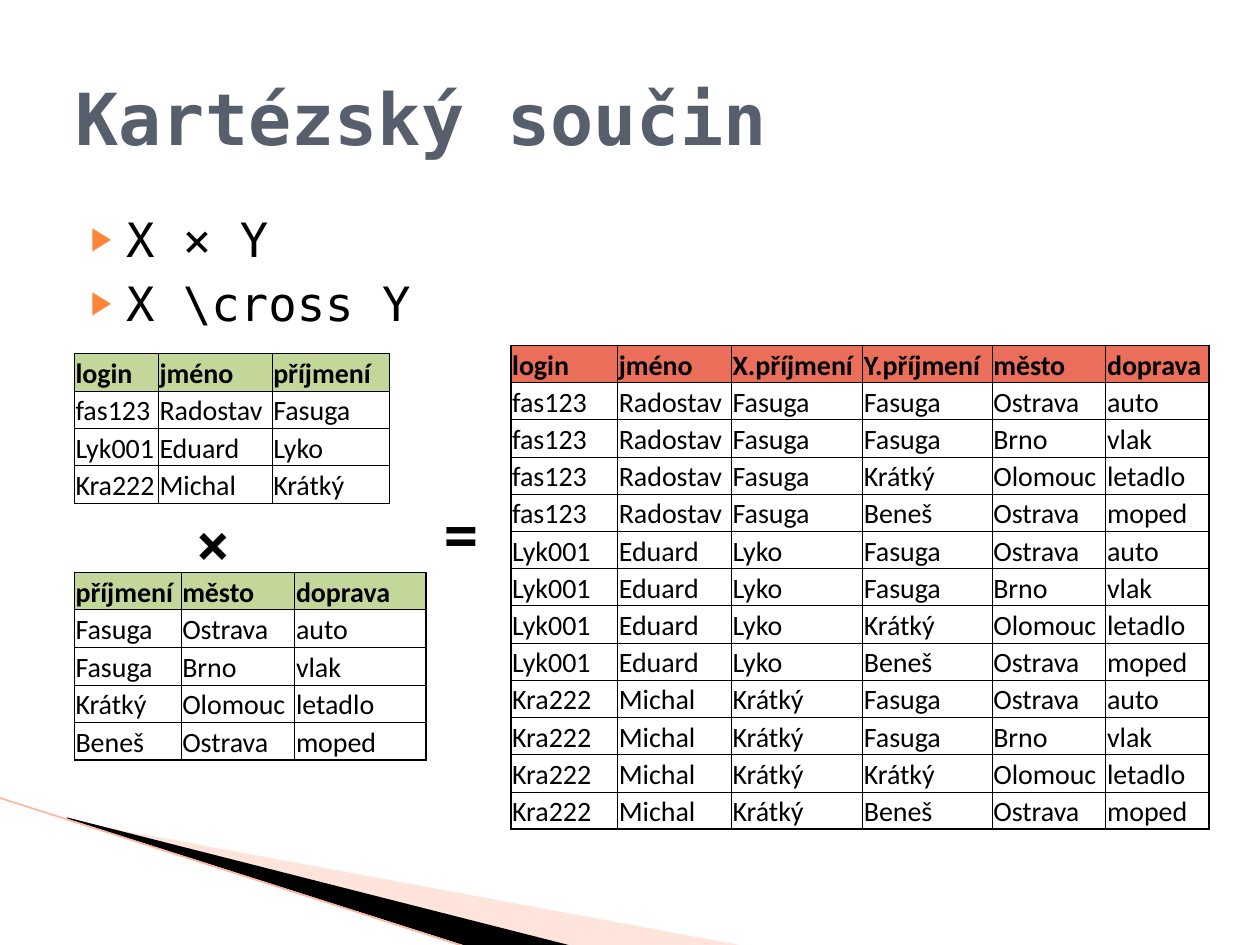
from itertools import product

from lxml.etree import SubElement
from pptx import Presentation
from pptx.dml.color import RGBColor
from pptx.enum.shapes import MSO_CONNECTOR
from pptx.enum.text import MSO_ANCHOR, MSO_AUTO_SIZE, PP_ALIGN
from pptx.oxml import parse_xml
from pptx.oxml.ns import nsdecls, qn
from pptx.util import Pt

COLORS = {
    "black": "000000",
    "title": "575F6D",
    "bullet": "FE8637",
    "operand": "C4D79B",
    "result": "EB6E5A",
    "pale": "FFBCA5",
    "edge": "FFB59B",
}
MONO, SANS = "DejaVu Sans Mono", "Calibri"

X_HEADER = ["login", "jméno", "příjmení"]
X_ROWS = [
    ["fas123", "Radostav", "Fasuga"],
    ["Lyk001", "Eduard", "Lyko"],
    ["Kra222", "Michal", "Krátký"],
]
Y_HEADER = ["příjmení", "město", "doprava"]
Y_ROWS = [
    ["Fasuga", "Ostrava", "auto"],
    ["Fasuga", "Brno", "vlak"],
    ["Krátký", "Olomouc", "letadlo"],
    ["Beneš", "Ostrava", "moped"],
]
RESULT_HEADER = ["login", "jméno", "X.příjmení", "Y.příjmení", "město", "doprava"]
RESULT_ROWS = [x_row + y_row for x_row, y_row in product(X_ROWS, Y_ROWS)]


def rgb(name):
    return RGBColor.from_string(COLORS[name])


def write(paragraph, text, size, font=MONO, color="black", bold=False):
    paragraph.alignment = PP_ALIGN.LEFT
    run = paragraph.add_run()
    run.text = text
    run.font.name = font
    run.font.size = Pt(size)
    run.font.bold = bold
    run.font.color.rgb = rgb(color)


def place(shape, box):
    shape.left, shape.top, shape.width, shape.height = map(Pt, box)


def add_wedge(slide, points, color, opacity=100):
    builder = slide.shapes.build_freeform(*points[0], scale=Pt(1))
    builder.add_line_segments(points[1:])
    shape = builder.convert_to_shape()
    shape.shadow.inherit = False
    shape.line.fill.background()
    shape.fill.solid()
    shape.fill.fore_color.rgb = rgb(color)
    if opacity < 100:
        color_element = shape.fill._xPr.find(qn("a:solidFill"))[0]
        SubElement(color_element, qn("a:alpha"), val=str(opacity * 1000))


def add_corner(slide):
    """Draw the wedges and the edge line in the lower left corner."""
    add_wedge(slide, [(39.6, 468.7), (428.4, 540.7), (328.3, 540.7), (39.6, 468)],
              "pale", opacity=40)
    add_wedge(slide, [(38.2, 467.3), (329, 540.7), (267.8, 541.4), (38.9, 468)], "black")
    edge = slide.shapes.add_connector(
        MSO_CONNECTOR.STRAIGHT, Pt(-0.7), Pt(455.8), Pt(267.1), Pt(541.4))
    edge.line.color.rgb = rgb("edge")
    edge.line.width = Pt(0.95)
    SubElement(edge._element.spPr, qn("a:effectLst"))


def fill_title(title, box, text):
    place(title, box)
    title.text_frame.auto_size = MSO_AUTO_SIZE.NONE
    title.text_frame.vertical_anchor = MSO_ANCHOR.MIDDLE
    write(title.text_frame.paragraphs[0], text, size=41, color="title", bold=True)


def add_bullet(paragraph):
    properties = paragraph._p.get_or_add_pPr()
    properties.set("marL", str(Pt(28.8)))
    properties.set("indent", str(Pt(-20.2)))
    color = SubElement(properties, qn("a:buClr"))
    SubElement(color, qn("a:srgbClr"), val=COLORS["bullet"])
    SubElement(properties, qn("a:buSzPct"), val="68000")
    SubElement(properties, qn("a:buChar"), char="▶")


def fill_list(body, box, items):
    place(body, box)
    frame = body.text_frame
    frame.auto_size = MSO_AUTO_SIZE.NONE
    for index, item in enumerate(items):
        paragraph = frame.add_paragraph() if index else frame.paragraphs[0]
        add_bullet(paragraph)
        paragraph.space_before = Pt(4 if index else 0)
        write(paragraph, item, size=27)


def set_borders(cell, widths):
    """Set the left, right, top and bottom borders, widths in points."""
    properties = cell._tc.get_or_add_tcPr()
    for index, (side, width) in enumerate(zip("LRTB", widths)):
        properties.insert(index, parse_xml(
            f'<a:ln{side} {nsdecls("a")} w="{Pt(width)}"><a:solidFill>'
            f'<a:srgbClr val="{COLORS["black"]}"/></a:solidFill></a:ln{side}>'))


def add_relation(slide, box, header, rows, column_widths, header_color):
    """Add a table with a coloured header, thin inner and thicker outer borders."""
    data = [header] + rows
    last_row, last_column = len(data) - 1, len(header) - 1
    table = slide.shapes.add_table(len(data), len(header), *map(Pt, box)).table
    table.first_row = table.horz_banding = False
    for column, width in zip(table.columns, column_widths):
        column.width = Pt(width)
    for row in table.rows:
        row.height = Pt(box[3] / len(data))
    for row_index, values in enumerate(data):
        for column_index, value in enumerate(values):
            cell = table.cell(row_index, column_index)
            cell.margin_left = cell.margin_right = cell.margin_top = Pt(0.7)
            cell.margin_bottom = 0
            cell.vertical_anchor = MSO_ANCHOR.BOTTOM
            is_header = row_index == 0
            if is_header:
                cell.fill.solid()
                cell.fill.fore_color.rgb = rgb(header_color)
            else:
                cell.fill.background()
            outer = (column_index == 0, column_index == last_column,
                     is_header, row_index == last_row)
            set_borders(cell, [1 if is_outer else 0.5 for is_outer in outer])
            write(cell.text_frame.paragraphs[0], value, size=16, font=SANS, bold=is_header)


def add_operator(slide, box, symbol):
    frame = slide.shapes.add_textbox(*map(Pt, box)).text_frame
    frame.word_wrap = True
    frame.auto_size = MSO_AUTO_SIZE.SHAPE_TO_FIT_TEXT
    write(frame.paragraphs[0], symbol, size=32, bold=True)


def build_product_slide(presentation):
    slide = presentation.slides.add_slide(presentation.slide_layouts[1])
    title, body = slide.placeholders
    add_corner(slide)
    for placeholder in (body, title):
        slide.shapes._spTree.append(placeholder._element)
    fill_list(body, (36, 116.6, 648, 356.4), ["X × Y", "X \\cross Y"])
    fill_title(title, (36, 21.6, 648, 90), "Kartézský součin")
    add_relation(slide, (42.5, 202, 180, 85.7), X_HEADER, X_ROWS,
                 [48, 65, 67], "operand")
    add_relation(slide, (42.5, 327, 201, 107.3), Y_HEADER, Y_ROWS,
                 [61, 65, 75], "operand")
    add_relation(slide, (292, 197.4, 399, 276.5), RESULT_HEADER, RESULT_ROWS,
                 [61, 65, 75, 74, 65, 59], "result")
    add_operator(slide, (105.1, 287.3, 56.9, 46), "×")
    add_operator(slide, (247, 281.5, 56.9, 46), "=")


def main():
    presentation = Presentation()
    presentation.slide_width, presentation.slide_height = Pt(720), Pt(540)
    build_product_slide(presentation)
    presentation.save("out.pptx")


if __name__ == "__main__":
    main()
